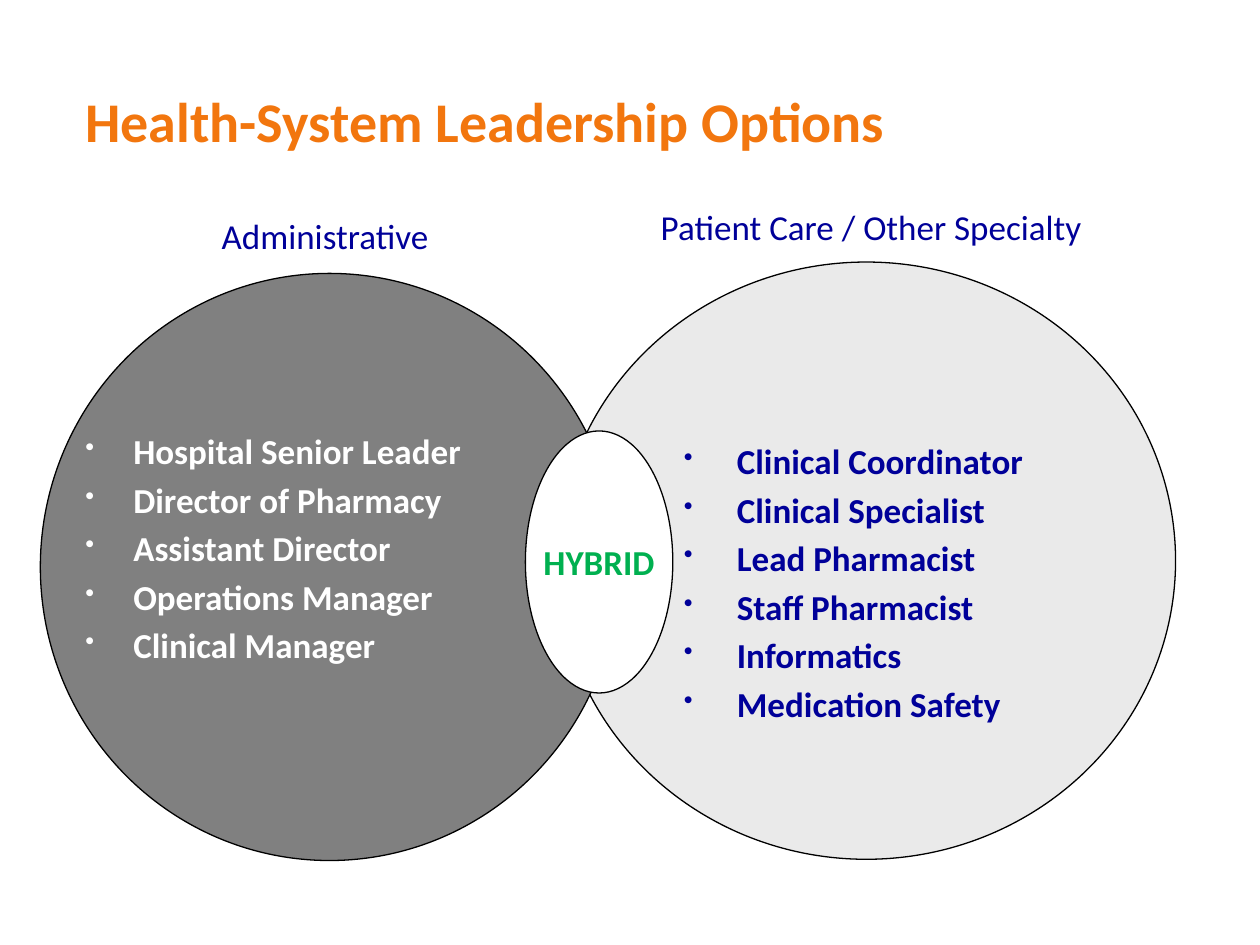
from pptx import Presentation
from pptx.dml.color import RGBColor
from pptx.enum.shapes import MSO_SHAPE
from pptx.enum.text import MSO_ANCHOR, PP_ALIGN
from pptx.oxml.ns import qn
from pptx.util import Inches, Pt
from lxml.etree import SubElement

COLORS = {
    "title": "F2760E",
    "navy": "000099",
    "white": "FFFFFF",
    "green": "00B050",
    "outline": "000000",
    "administrative": "808080",
    "patient_care": "EAEAEA",
}


class VennSlide:
    font_name = "Calibri"
    text_size = 20

    def __init__(self, slide):
        self.slide = slide

    def style(self, paragraph, color, size=None, bold=False):
        font = paragraph.font
        font.name = self.font_name
        font.size = Pt(size or self.text_size)
        font.bold = bold
        font.color.rgb = RGBColor.from_string(COLORS[color])

    def text_box(self, left, top, width, height):
        box = self.slide.shapes.add_textbox(
            Inches(left), Inches(top), Inches(width), Inches(height))
        box.text_frame.word_wrap = True
        return box.text_frame

    def title(self, text, *place):
        frame = self.text_box(*place)
        frame.vertical_anchor = MSO_ANCHOR.MIDDLE
        frame.text = text
        self.style(frame.paragraphs[0], "title", size=32, bold=True)

    def heading(self, text, *place):
        frame = self.text_box(*place)
        frame.text = text
        paragraph = frame.paragraphs[0]
        paragraph.alignment = PP_ALIGN.CENTER
        self.style(paragraph, "navy")

    def ellipse(self, fill, left, top, width, height):
        shape = self.slide.shapes.add_shape(
            MSO_SHAPE.OVAL, Inches(left), Inches(top), Inches(width), Inches(height))
        shape.shadow.inherit = False
        shape.fill.solid()
        shape.fill.fore_color.rgb = RGBColor.from_string(COLORS[fill])
        shape.line.color.rgb = RGBColor.from_string(COLORS["outline"])
        shape.line.width = Pt(0.75)
        return shape

    def label(self, shape, text, color):
        frame = shape.text_frame
        frame.word_wrap = False
        frame.vertical_anchor = MSO_ANCHOR.MIDDLE
        frame.text = text
        paragraph = frame.paragraphs[0]
        paragraph.alignment = PP_ALIGN.CENTER
        self.style(paragraph, color, bold=True)

    def bullets(self, items, color, indent, *place):
        frame = self.text_box(*place)
        for index, item in enumerate(items):
            paragraph = frame.paragraphs[0] if index == 0 else frame.add_paragraph()
            paragraph.text = item
            if index:
                paragraph.space_before = Pt(3.7)
            properties = paragraph._p.get_or_add_pPr()
            properties.set("marL", str(Inches(indent)))
            properties.set("indent", str(-Inches(indent)))
            SubElement(properties, qn("a:buSzPct"), val="75000")
            SubElement(properties, qn("a:buChar"), char="•")
            self.style(paragraph, color, bold=True)


def main():
    presentation = Presentation()
    presentation.slide_width = Inches(10)
    presentation.slide_height = Inches(7.5)
    venn = VennSlide(presentation.slides.add_slide(presentation.slide_layouts[6]))

    venn.title("Health-System Leadership Options", 0.58, 0.33, 8.5, 1.25)

    # Overlapping circles
    venn.ellipse("patient_care", 4.42, 2.08, 4.91, 4.74)
    venn.ellipse("administrative", 0.32, 2.17, 4.59, 4.66)

    # Roles in each circle
    venn.bullets(
        ["Hospital Senior Leader", "Director of Pharmacy", "Assistant Director",
         "Operations Manager", "Clinical Manager"],
        "white", 0.38, 0.58, 3.36, 4.17, 2.72)
    venn.bullets(
        ["Clinical Coordinator", "Clinical Specialist", "Lead Pharmacist",
         "Staff Pharmacist", "Informatics", "Medication Safety"],
        "navy", 0.42, 5.33, 3.44, 3.9, 2.5)

    # Headings above the circles
    venn.heading("Administrative", 0.83, 1.65, 3.5, 0.43)
    venn.heading("Patient Care / Other Specialty", 4.83, 1.58, 4.17, 0.43)

    # Shared area in the middle
    hybrid = venn.ellipse("white", 4.17, 3.42, 1.17, 2.08)
    venn.label(hybrid, "HYBRID", "green")

    presentation.save("out.pptx")


if __name__ == "__main__":
    main()
